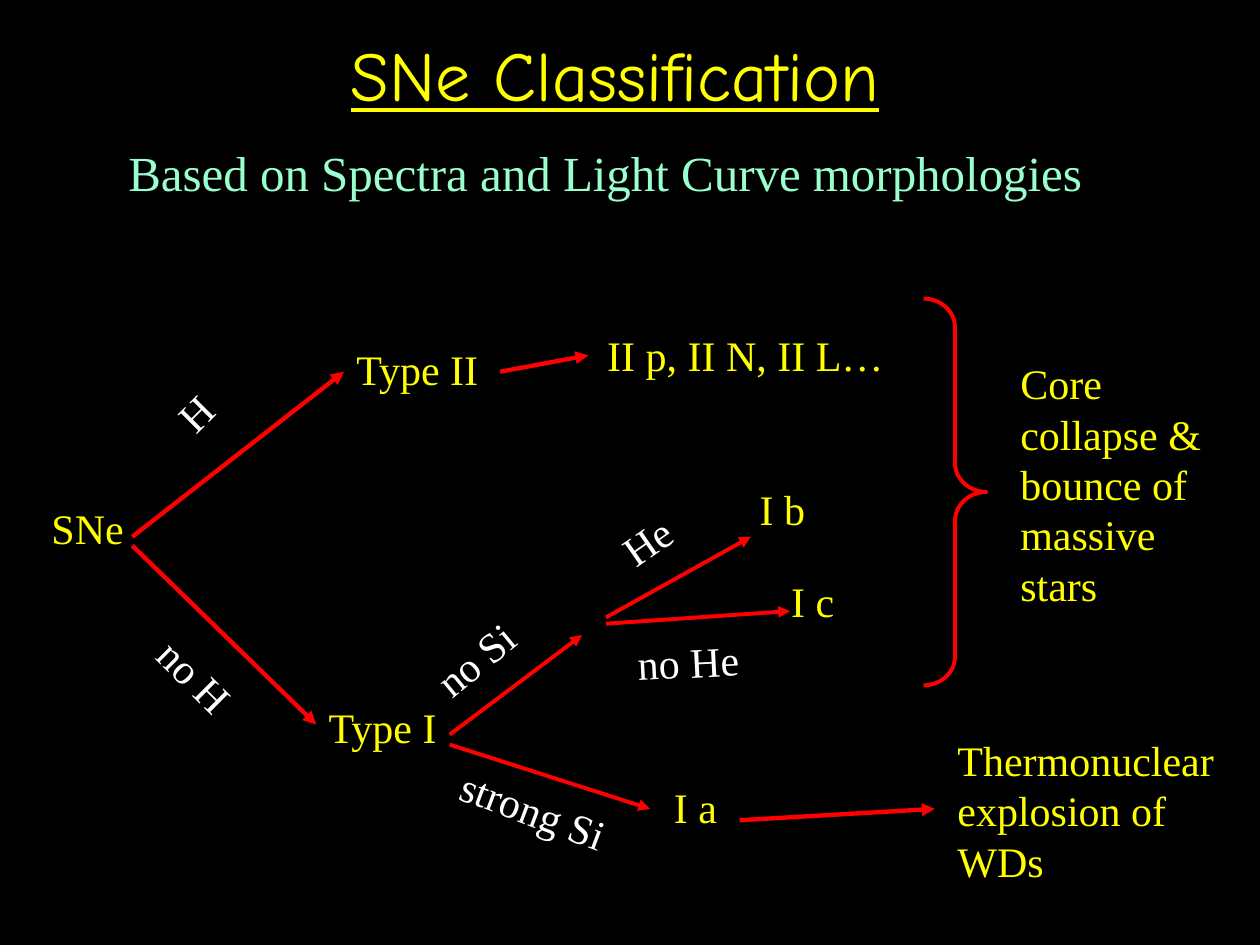
"""Build a slide with a tree of supernova classes."""
from dataclasses import dataclass

import pptx
import pptx.dml.color
import pptx.enum.shapes
import pptx.enum.text
import pptx.oxml
import pptx.oxml.ns
import pptx.util
from pptx.util import Inches

RED, YELLOW, WHITE, MINT = "FF0000", "FFFF00", "FFFFFF", "99FFCC"
SERIF = "Times New Roman"


@dataclass
class Label:
    text: str
    left: float
    top: float
    width: float
    height: float = 0.5
    turn: float = 0
    color: str = YELLOW
    size: float = 24


@dataclass
class Arrow:
    start: tuple[float, float]
    end: tuple[float, float]
    width: float = 2.5


LABELS = [
    Label("Based on Spectra and Light Curve morphologies",
          0.92, 1.08, 8.17, 0.57, color=MINT, size=28),
    Label("SNe", 0.31, 3.94, 1.22),
    Label("Type II", 2.73, 2.68, 1.22),
    Label("Type I", 2.51, 5.52, 1.22),
    Label("II p, II N, II L…", 4.72, 2.57, 2.48),
    Label("I a", 5.25, 6.15, 1.02),
    Label("I b", 5.93, 3.79, 1.02),
    Label("I c", 6.18, 4.52, 0.68),
    Label("Core collapse & bounce of massive stars", 8, 2.79, 1.67, 2.12),
    Label("Thermonuclear explosion of WDs", 7.5, 5.78, 2.42, 1.31),
    Label("H", 1.22, 2.75, 1.22, turn=315, color=WHITE),
    Label("no H", 1.08, 5.23, 1.18, turn=45, color=WHITE),
    Label("no Si", 3.27, 4.82, 1.4, turn=320.5, color=WHITE),
    Label("strong Si", 3.54, 6.18, 1.4, turn=20.6, color=WHITE),
    Label("He", 4.83, 4, 0.74, turn=325.2, color=WHITE),
    Label("no He", 4.96, 4.99, 1.4, turn=357, color=WHITE),
]

ARROWS = [
    Arrow((1.05, 4.26), (2.73, 2.95)),
    Arrow((1.05, 4.33), (2.51, 5.75)),
    Arrow((3.97, 2.95), (4.67, 2.82)),
    Arrow((5.87, 6.51), (7.42, 6.42)),
    Arrow((3.57, 5.83), (4.62, 5.04), 2.25),
    Arrow((3.57, 5.91), (5.16, 6.42), 2.25),
    Arrow((4.81, 4.9), (5.96, 4.26), 2.25),
    Arrow((4.81, 4.95), (6.27, 4.85), 2.25),
]


def paint(target, color: str) -> None:
    target.rgb = pptx.dml.color.RGBColor.from_string(color)


def write(para, text: str, size: float, face: str, color: str):
    run = para.add_run()
    run.text = text
    run.font.size = pptx.util.Pt(size)
    run.font.name = face
    paint(run.font.color, color)
    return run


def stroke(line, width: float) -> None:
    paint_fill = line.fill
    paint_fill.solid()
    paint(paint_fill.fore_color, RED)
    line.width = pptx.util.Pt(width)


def add_title(slide, text: str) -> None:
    title = slide.shapes.title
    title.left, title.top = Inches(1.67), Inches(0.08)
    title.width, title.height = Inches(6.42), Inches(1)
    title.text_frame.vertical_anchor = pptx.enum.text.MSO_ANCHOR.MIDDLE
    para = title.text_frame.paragraphs[0]
    para.alignment = pptx.enum.text.PP_ALIGN.CENTER
    write(para, text, 40, "Comic Neue", YELLOW).font.underline = True


def add_label(slide, label: Label) -> None:
    box = slide.shapes.add_textbox(
        Inches(label.left), Inches(label.top),
        Inches(label.width), Inches(label.height))
    box.rotation = label.turn
    frame = box.text_frame
    frame.word_wrap = True
    frame.auto_size = pptx.enum.text.MSO_AUTO_SIZE.SHAPE_TO_FIT_TEXT
    write(frame.paragraphs[0], label.text, label.size, SERIF, label.color)


def add_arrow(slide, arrow: Arrow) -> None:
    link = slide.shapes.add_connector(
        pptx.enum.shapes.MSO_CONNECTOR.STRAIGHT,
        *map(Inches, arrow.start + arrow.end))
    stroke(link.line, arrow.width)
    tail = pptx.oxml.parse_xml(
        f'<a:tailEnd {pptx.oxml.ns.nsdecls("a")} type="triangle"/>')
    link.line._get_or_add_ln().append(tail)
    plain = pptx.oxml.parse_xml(f'<a:effectLst {pptx.oxml.ns.nsdecls("a")}/>')
    link._element.spPr.append(plain)


def add_brace(slide) -> None:
    brace = slide.shapes.add_shape(
        pptx.enum.shapes.MSO_SHAPE.RIGHT_BRACE,
        Inches(7.33), Inches(2.37), Inches(0.5), Inches(3.07))
    brace.adjustments[0] = 0.46
    brace.shadow.inherit = False
    brace.fill.background()
    stroke(brace.line, 2.25)


def main() -> None:
    deck = pptx.Presentation()
    deck.slide_width, deck.slide_height = Inches(10), Inches(7.5)
    slide = deck.slides.add_slide(deck.slide_layouts[5])
    fill = slide.background.fill
    fill.solid()
    paint(fill.fore_color, "000000")
    add_title(slide, "SNe Classification")
    add_brace(slide)
    for arrow in ARROWS:
        add_arrow(slide, arrow)
    for label in LABELS:
        add_label(slide, label)
    deck.save("out.pptx")


if __name__ == "__main__":
    main()
